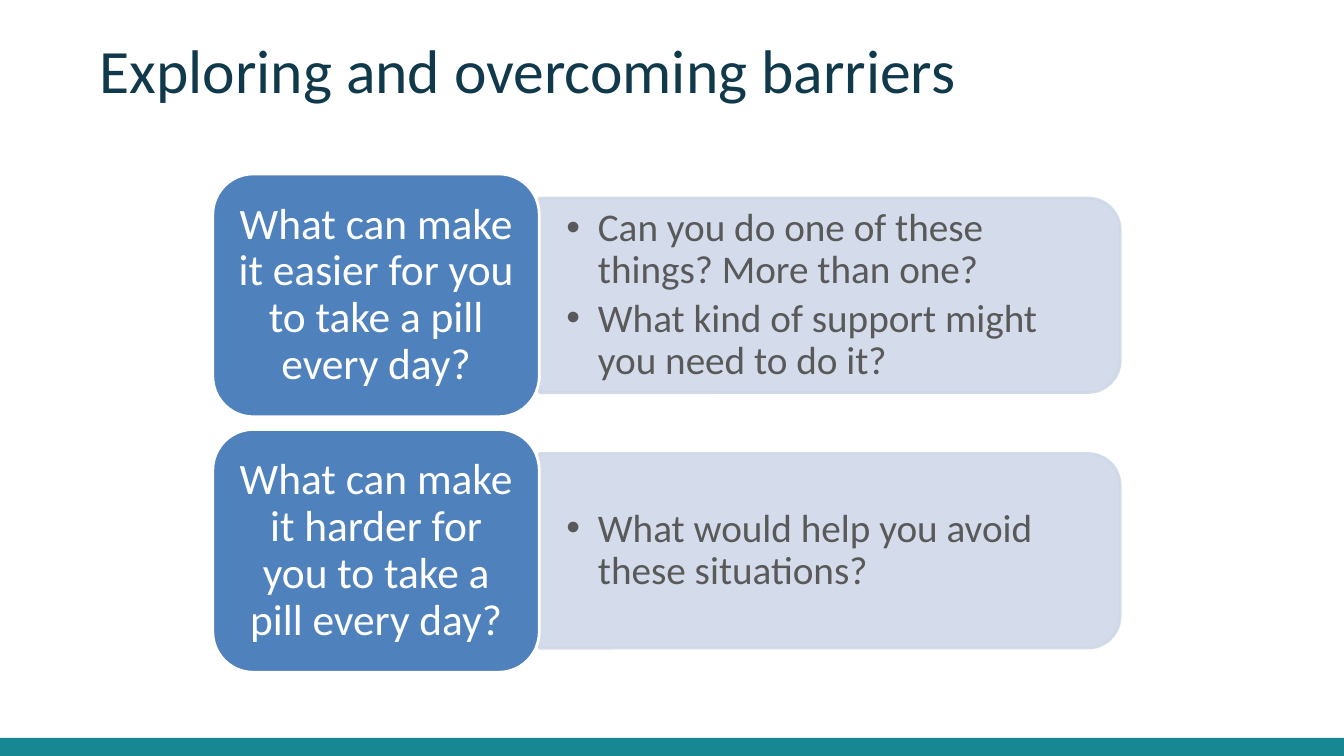
from dataclasses import dataclass

from lxml.etree import SubElement
from pptx import Presentation
from pptx.dml.color import RGBColor
from pptx.enum.shapes import MSO_SHAPE
from pptx.enum.text import MSO_ANCHOR, PP_ALIGN
from pptx.oxml.ns import qn
from pptx.util import Pt


@dataclass(frozen=True)
class Theme:
    font: str = "Calibri"
    title: str = "10394B"
    bar: str = "178793"
    head: str = "4F81BD"
    pane: str = "D0D8E8"
    body: str = "595959"
    white: str = "FFFFFF"
    title_size: int = 44
    head_size: int = 31
    body_size: int = 28


class Deck:
    def __init__(self, theme):
        self.theme = theme
        self.prs = Presentation()
        self.prs.slide_width, self.prs.slide_height = Pt(960), Pt(540)
        self.slide = self.prs.slides.add_slide(self.prs.slide_layouts[5])

    def style(self, par, size, color, align, gap):
        par.alignment = align
        par.line_spacing = gap
        for run in par.runs:
            run.font.name = self.theme.font
            run.font.size = Pt(size)
            run.font.color.rgb = RGBColor.from_string(color)

    def frame(self, shape, anchor, side, edge):
        frame = shape.text_frame
        frame.word_wrap = True
        frame.vertical_anchor = anchor
        frame.margin_left = frame.margin_right = Pt(side)
        frame.margin_top = frame.margin_bottom = Pt(edge)
        return frame

    def title(self, text, left, top, width, height):
        shape = self.slide.shapes.title
        shape.left, shape.top = Pt(left), Pt(top)
        shape.width, shape.height = Pt(width), Pt(height)
        frame = self.frame(shape, MSO_ANCHOR.TOP, 7.2, 3.6)
        frame.text = text
        self.style(frame.paragraphs[0], self.theme.title_size,
                   self.theme.title, PP_ALIGN.LEFT, Pt(44.8))

    def shape(self, kind, left, top, width, height, fill, line=None):
        shape = self.slide.shapes.add_shape(
            kind, Pt(left), Pt(top), Pt(width), Pt(height))
        shape.shadow.inherit = False
        shape.fill.solid()
        shape.fill.fore_color.rgb = RGBColor.from_string(fill)
        if line:
            shape.line.color.rgb = RGBColor.from_string(line)
            shape.line.width = Pt(2)
        else:
            shape.line.fill.background()
        return shape

    def head(self, text, left, top, width, height):
        shape = self.shape(MSO_SHAPE.ROUNDED_RECTANGLE, left, top, width,
                           height, self.theme.head, self.theme.white)
        frame = self.frame(shape, MSO_ANCHOR.MIDDLE, 9.5, 4.5)
        frame.text = text
        self.style(frame.paragraphs[0], self.theme.head_size,
                   self.theme.white, PP_ALIGN.CENTER, 0.9)

    def pane(self, left, top, width, height):
        shift = (width - height) / 2
        shape = self.shape(MSO_SHAPE.ROUND_2_SAME_RECTANGLE, left + shift,
                           top - shift, height, width,
                           self.theme.pane, self.theme.pane)
        shape.rotation = 90
        for color in shape.element.spPr.iter(qn("a:srgbClr")):
            SubElement(color, qn("a:alpha"), val="90000")

    def list(self, items, left, top, width, height):
        box = self.slide.shapes.add_textbox(
            Pt(left), Pt(top), Pt(width), Pt(height))
        frame = self.frame(box, MSO_ANCHOR.MIDDLE, 19.4, 10)
        frame.text = "\n".join(items)
        for par in frame.paragraphs:
            self.style(par, self.theme.body_size, self.theme.body,
                       PP_ALIGN.LEFT, 0.9)
            par.space_after = Pt(4.2)
            props = par._p.get_or_add_pPr()
            props.set("marL", str(Pt(22.5)))
            props.set("indent", str(-Pt(22.5)))
            SubElement(props, qn("a:buFont"), typeface="Arial")
            SubElement(props, qn("a:buChar"), char="•")


def main():
    theme = Theme()
    deck = Deck(theme)
    deck.shape(MSO_SHAPE.RECTANGLE, 0, 527, 960, 13, theme.bar)
    deck.title("Exploring and overcoming barriers", 64, 27, 762.5, 90)

    rows = [
        ("What can make it easier for you to take a pill every day?",
         ["Can you do one of these things? More than one?",
          "What kind of support might you need to do it?"]),
        ("What can make it harder for you to take a pill every day?",
         ["What would help you avoid these situations?"]),
    ]
    left, first, step = 152, 124.2, 182.5
    head_w, head_h = 233.2, 173.5
    pane_w, pane_h = 415, 139
    for row, (head, items) in enumerate(rows):
        top = first + row * step
        inner = top + (head_h - pane_h) / 2
        deck.pane(left + head_w, inner, pane_w, pane_h)
        deck.list(items, left + head_w, inner, pane_w - 7, pane_h)
        deck.head(head, left, top, head_w, head_h)

    deck.prs.save("out.pptx")


if __name__ == "__main__":
    main()
